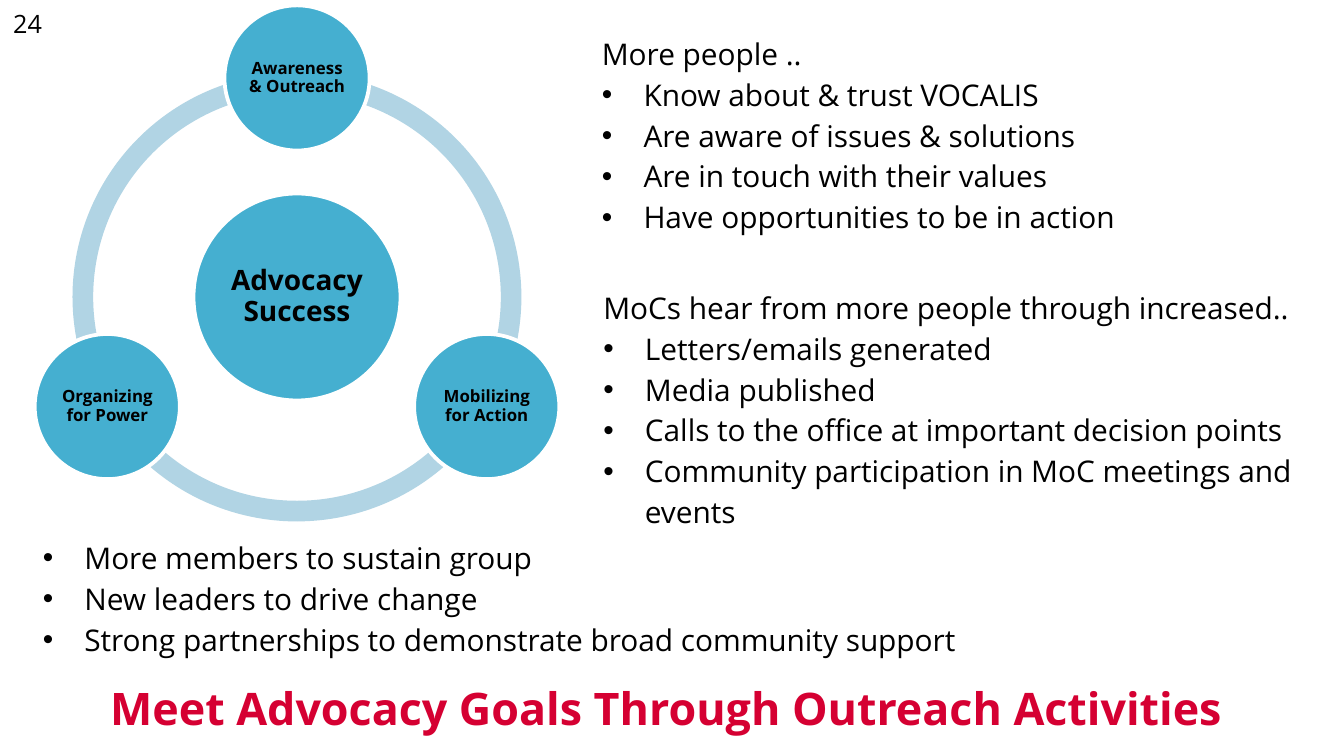
"""Builds the slide that links outreach activities to advocacy goals."""
from math import cos, radians, sin

from lxml import etree
from pptx import Presentation
from pptx.dml.color import RGBColor
from pptx.enum.shapes import MSO_SHAPE
from pptx.enum.text import MSO_ANCHOR, MSO_AUTO_SIZE, PP_ALIGN
from pptx.oxml.ns import qn
from pptx.util import Inches, Pt

ARC, OVAL = MSO_SHAPE.BLOCK_ARC, MSO_SHAPE.OVAL
MIDDLE, CENTER = MSO_ANCHOR.MIDDLE, PP_ALIGN.CENTER
GROW = MSO_AUTO_SIZE.SHAPE_TO_FIT_TEXT
FONT = "Open Sans"
BLACK = RGBColor(0, 0, 0)
WHITE = RGBColor(255, 255, 255)
RED = RGBColor(0xD5, 0x00, 0x32)
BLUE = RGBColor(0x45, 0xAF, 0xD0)
PALE = RGBColor(0xB1, 0xD4, 0xE4)

NUMBER = "24"
TITLE = "Meet Advocacy Goals Through Outreach Activities "
GOAL = "Advocacy Success"
STEPS = [
    ("Awareness & Outreach", -90),
    ("Mobilizing for Action", 30),
    ("Organizing for Power", 150),
]
LISTS = [
    ((4.38, 0.18, 4.08, 1.62), "More people ..", [
        "Know about & trust VOCALIS",
        "Are aware of issues & solutions",
        "Are in touch with their values",
        "Have opportunities to be in action",
    ]),
    ((4.39, 2.07, 5.39, 1.92), "MoCs hear from more people through increased..", [
        "Letters/emails generated",
        "Media published",
        "Calls to the office at important decision points",
        "Community participation in MoC meetings and events",
    ]),
    ((0.22, 3.93, 7.37, 1), None, [
        "More members to sustain group",
        "New leaders to drive change",
        "Strong partnerships to demonstrate broad community support",
    ]),
]
ARCS = [(90, 162), (18, 90), (162, 18)]
HUB, ORBIT = 2.21, 1.63
RING, CORE, NODE = 3.34, 1.54, 1.08


def write(para, text, size, color=BLACK, bold=False):
    run = para.add_run()
    run.text = text
    font = run.font
    font.name, font.size, font.bold = FONT, Pt(size), bold
    font.color.rgb = color


def add_box(place):
    frame = slide.shapes.add_textbox(*map(Inches, place)).text_frame
    frame.word_wrap = True
    return frame


def add_round(kind, x, y, size, fill):
    shape = wheel.shapes.add_shape(
        kind, Inches(x - size / 2), Inches(y - size / 2), Inches(size), Inches(size))
    shape.shadow.inherit = False
    shape.fill.solid()
    shape.fill.fore_color.rgb = fill
    return shape


def add_disc(x, y, size, text, points, inset):
    disc = add_round(OVAL, x, y, size, BLUE)
    disc.line.color.rgb = WHITE
    disc.line.width = Pt(2)
    frame = disc.text_frame
    frame.word_wrap = True
    frame.vertical_anchor = MIDDLE
    frame.margin_left = frame.margin_right = Inches(inset)
    frame.margin_top = frame.margin_bottom = Inches(inset)
    para = frame.paragraphs[0]
    para.alignment = CENTER
    para.line_spacing = 0.9
    write(para, text, points, bold=True)


def add_bullet(para):
    props = para._p.get_or_add_pPr()
    props.set("marL", str(Inches(0.31)))
    props.set("indent", str(-Inches(0.31)))
    etree.SubElement(props, qn("a:buFont")).set("typeface", "Arial")
    etree.SubElement(props, qn("a:buChar")).set("char", "•")


def add_list(place, head, items):
    frame = add_box(place)
    frame.auto_size = GROW
    rows = ([(head, False)] if head else []) + [(item, True) for item in items]
    for i, (text, mark) in enumerate(rows):
        para = frame.add_paragraph() if i else frame.paragraphs[0]
        if mark:
            add_bullet(para)
        para.line_spacing = 1.14
        write(para, text, 16)


deck = Presentation()
deck.slide_width = Inches(10)
deck.slide_height = deck.slide_width * 9 // 16
slide = deck.slides.add_slide(deck.slide_layouts[6])

frame = add_box((0, 0.01, 0.45, 0.33))
frame.auto_size = GROW
write(frame.paragraphs[0], NUMBER, 13.5)

frame = add_box((0.38, 4.96, 9.24, 0.61))
frame.vertical_anchor = MIDDLE
frame.paragraphs[0].alignment = CENTER
write(frame.paragraphs[0], TITLE, 24, RED, True)

wheel = slide.shapes.add_group_shape()
for start, end in ARCS:
    arc = add_round(ARC, HUB, HUB, RING, PALE)
    arc.line.fill.background()
    arc.adjustments[0] = start * 0.6
    arc.adjustments[1] = end * 0.6
    arc.adjustments[2] = 0.046
add_disc(HUB, HUB, CORE, GOAL, 15, 0.02)
for text, angle in STEPS:
    turn = radians(angle)
    add_disc(HUB + ORBIT * cos(turn), HUB + ORBIT * sin(turn), NODE, text, 9, 0.01)

for place, head, items in LISTS:
    add_list(place, head, items)

deck.save("out.pptx")
